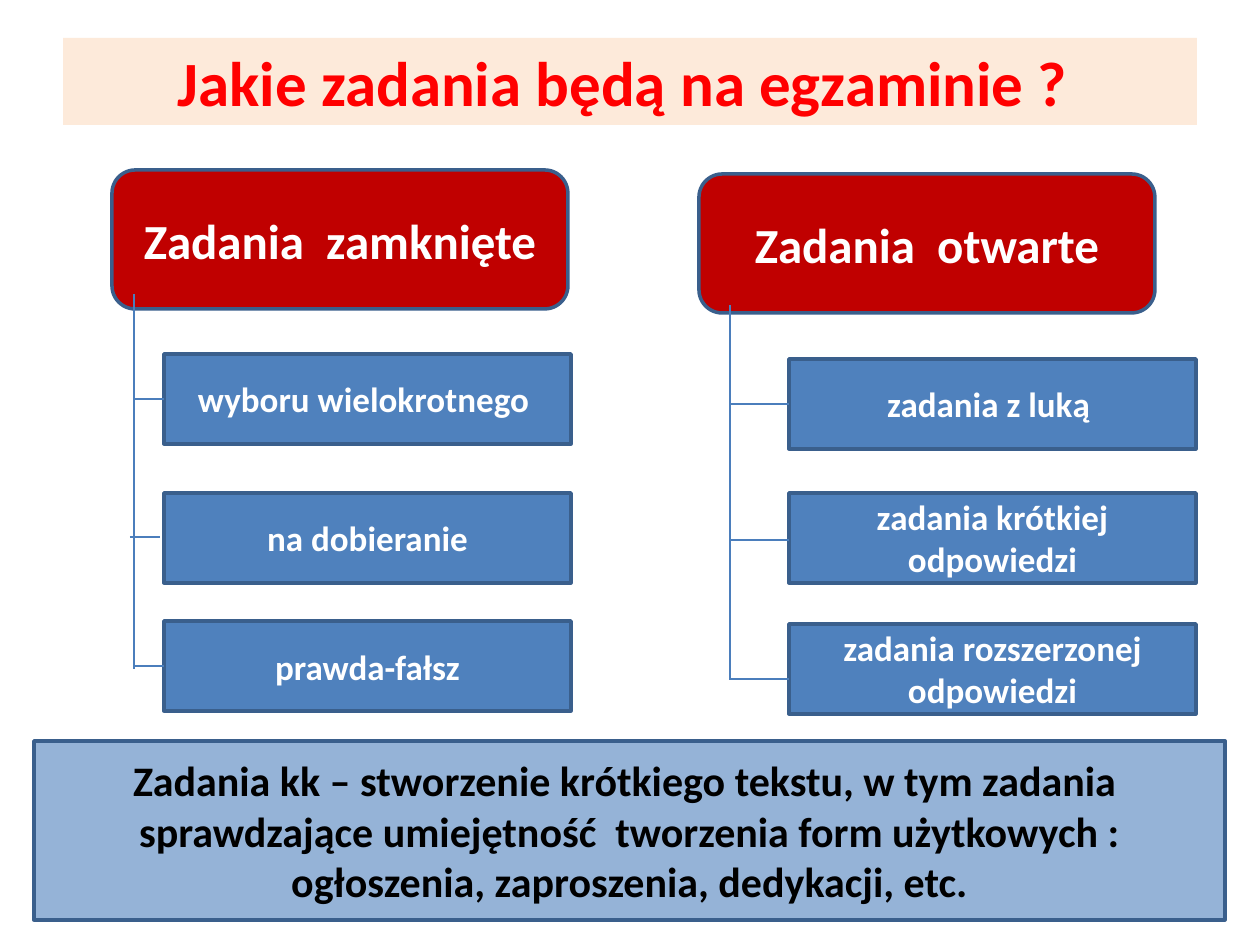
from dataclasses import dataclass

from lxml import etree
from pptx import Presentation
from pptx.dml.color import RGBColor
from pptx.enum.shapes import MSO_CONNECTOR, MSO_SHAPE
from pptx.enum.text import MSO_ANCHOR, MSO_AUTO_SIZE, PP_ALIGN
from pptx.oxml.ns import qn
from pptx.shapes.autoshape import Shape
from pptx.slide import Slide
from pptx.util import Emu, Pt

RECTANGLE = MSO_SHAPE.RECTANGLE
ROUNDED = MSO_SHAPE.ROUNDED_RECTANGLE
STRAIGHT = MSO_CONNECTOR.STRAIGHT
CENTER = PP_ALIGN.CENTER
MIDDLE = MSO_ANCHOR.MIDDLE
LEFT_SIDE = 1
TITLE_ONLY = 5
EMU_PER_PX = 914400 / 126


@dataclass(frozen=True)
class Theme:
    font: str = "Calibri"
    title_fill: str = "FDEADA"
    title_text: str = "FF0000"
    header_fill: str = "C00000"
    task_fill: str = "4F81BD"
    note_fill: str = "95B3D7"
    border: str = "3A5F8C"
    connector: str = "4B7EBC"
    light_text: str = "FFFFFF"
    dark_text: str = "000000"
    title_size: int = 36
    header_size: int = 28
    note_size: int = 24
    task_size: int = 20
    border_width: float = 2
    connector_width: float = 0.75


@dataclass(frozen=True)
class Box:
    left: int
    top: int
    width: int
    height: int


@dataclass(frozen=True)
class Task:
    text: str
    top: int
    branch_y: int
    joined: bool = False
    branch_shift: int = 0


@dataclass(frozen=True)
class Group:
    header: str
    header_left: int
    header_top: int
    task_left: int
    stem_x: int
    stem_top: int
    tasks: tuple[Task, ...]


THEME = Theme()
HEADER_WIDTH, HEADER_HEIGHT = 456, 139
TASK_WIDTH, TASK_HEIGHT = 407, 90
STEM_HEIGHT = 375

GROUPS = (
    Group("Zadania  zamknięte", 112, 170, 164, 134, 294, (
        Task("wyboru wielokrotnego ", 354, 399, joined=True),
        Task("na dobieranie", 493, 537, branch_shift=-4),
        Task("prawda-fałsz", 621, 666, joined=True),
    )),
    Group("Zadania  otwarte", 699, 174, 789, 730, 305, (
        Task("zadania z luką ", 359, 404, joined=True),
        Task("zadania krótkiej odpowiedzi", 493, 540),
        Task("zadania rozszerzonej odpowiedzi", 624, 679),
    )),
)


def px(length: int) -> Emu:
    return Emu(round(length * EMU_PER_PX))


def color(value: str) -> RGBColor:
    return RGBColor.from_string(value)


def write_text(shape: Shape, text: str, size: int, text_color: str) -> None:
    frame = shape.text_frame
    frame.text = text
    frame.word_wrap = True
    frame.auto_size = MSO_AUTO_SIZE.NONE
    frame.vertical_anchor = MIDDLE
    paragraph = frame.paragraphs[0]
    paragraph.alignment = CENTER
    font = paragraph.font
    font.name, font.size, font.bold = THEME.font, Pt(size), True
    font.color.rgb = color(text_color)


def fill_shape(shape: Shape, fill: str) -> None:
    shape.fill.solid()
    shape.fill.fore_color.rgb = color(fill)


def set_title(slide: Slide, text: str, box: Box) -> None:
    title = slide.shapes.title
    title.left, title.top = px(box.left), px(box.top)
    title.width, title.height = px(box.width), px(box.height)
    fill_shape(title, THEME.title_fill)
    write_text(title, text, THEME.title_size, THEME.title_text)


def add_box(slide: Slide, kind: MSO_SHAPE, box: Box, text: str, fill: str,
            size: int, text_color: str = THEME.light_text) -> Shape:
    shape = slide.shapes.add_shape(
        kind, px(box.left), px(box.top), px(box.width), px(box.height))
    shape.shadow.inherit = False
    fill_shape(shape, fill)
    shape.line.color.rgb = color(THEME.border)
    shape.line.width = Pt(THEME.border_width)
    write_text(shape, text, size, text_color)
    return shape


def add_line(slide: Slide, start: tuple[int, int], end: tuple[int, int],
             target: Shape | None = None) -> None:
    """Draw a thin line, joined to the target's left side if one is given."""
    line = slide.shapes.add_connector(
        STRAIGHT, px(start[0]), px(start[1]), px(end[0]), px(end[1]))
    line.line.color.rgb = color(THEME.connector)
    line.line.width = Pt(THEME.connector_width)
    etree.SubElement(line._element.spPr, qn("a:effectLst"))
    if target is not None:
        line.end_connect(target, LEFT_SIDE)


def add_group(slide: Slide, group: Group) -> None:
    header = Box(group.header_left, group.header_top, HEADER_WIDTH, HEADER_HEIGHT)
    add_box(slide, ROUNDED, header, group.header, THEME.header_fill,
            THEME.header_size)
    add_line(slide, (group.stem_x, group.stem_top),
             (group.stem_x, group.stem_top + STEM_HEIGHT))
    for task in group.tasks:
        box = Box(group.task_left, task.top, TASK_WIDTH, TASK_HEIGHT)
        shape = add_box(slide, RECTANGLE, box, task.text, THEME.task_fill,
                        THEME.task_size)
        add_line(slide, (group.stem_x + task.branch_shift, task.branch_y),
                 (group.task_left + task.branch_shift, task.branch_y),
                 shape if task.joined else None)


def main() -> None:
    presentation = Presentation()
    presentation.slide_width, presentation.slide_height = px(1260), px(945)
    slide = presentation.slides.add_slide(presentation.slide_layouts[TITLE_ONLY])
    set_title(slide, "Jakie zadania będą na egzaminie ? ", Box(63, 38, 1134, 87))
    for group in GROUPS:
        add_group(slide, group)
    add_box(slide, RECTANGLE, Box(34, 741, 1191, 179),
            "Zadania kk – stworzenie krótkiego tekstu, w tym zadania  "
            "sprawdzające umiejętność  tworzenia form użytkowych : "
            "ogłoszenia, zaproszenia, dedykacji, etc.",
            THEME.note_fill, THEME.note_size, THEME.dark_text)
    presentation.save("out.pptx")


if __name__ == "__main__":
    main()
